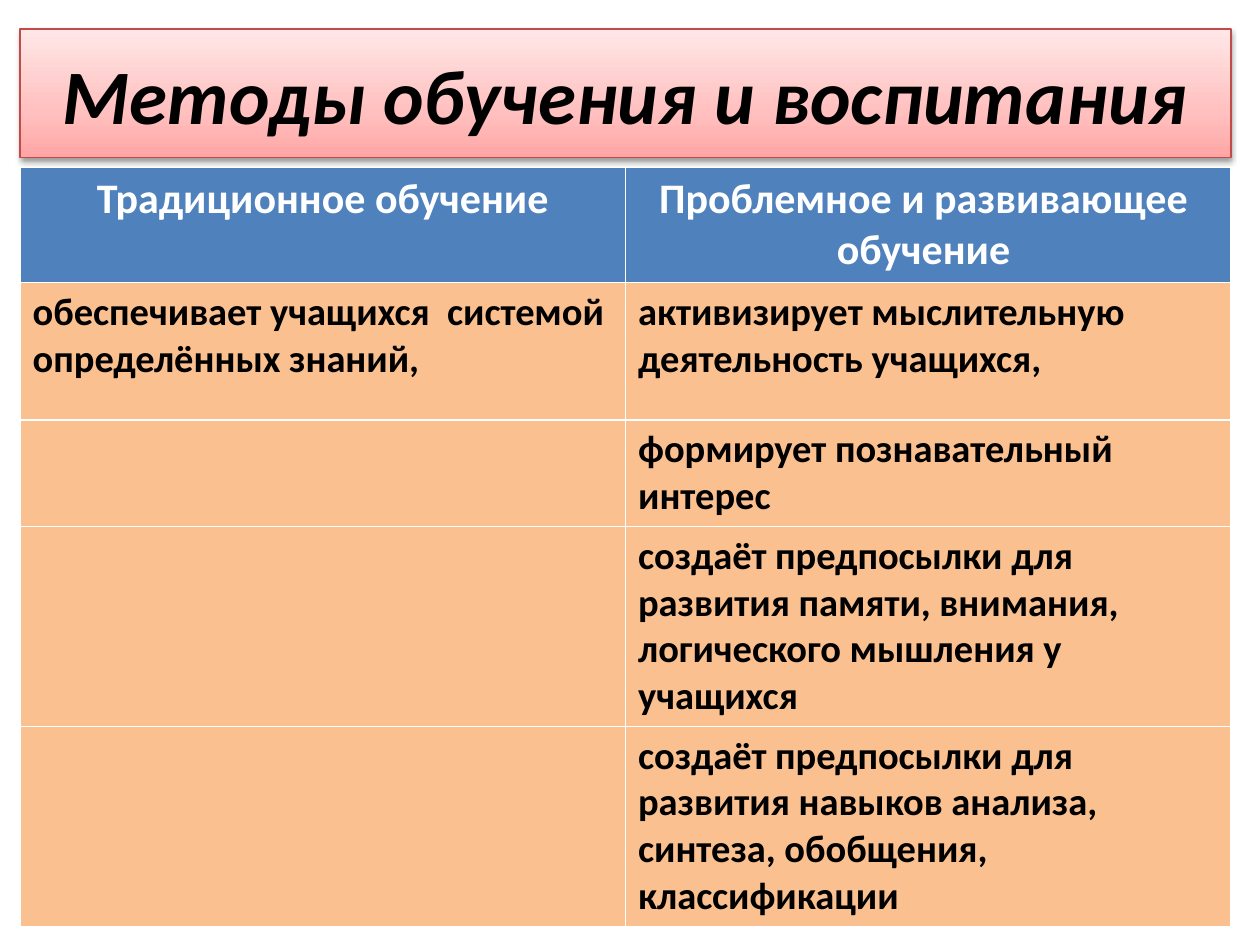
from lxml.etree import SubElement
from pptx import Presentation
from pptx.dml.color import RGBColor
from pptx.enum.text import MSO_ANCHOR, PP_ALIGN
from pptx.oxml.ns import qn
from pptx.util import Inches, Pt

HUES = {
    "black": "000000", "white": "FFFFFF", "blue": "4F81BD", "peach": "FAC090",
    "edge": "BF4C48", "deep": "FFA6A5", "mid": "FFC0BF", "pale": "FFE7E7",
}
LEFT, WIDTH = 0.16, 9.61
ROWS = [
    (0.9, "Традиционное обучение", "Проблемное и развивающее  обучение "),
    (1.09, "обеспечивает учащихся  системой определённых знаний,",
     "активизирует мыслительную деятельность учащихся,"),
    (0.83, "", "формирует познавательный интерес"),
    (1.56, "", "создаёт предпосылки для развития памяти, внимания, "
     "логического мышления у учащихся"),
    (1.56, "", "создаёт предпосылки для развития навыков анализа, "
     "синтеза, обобщения, классификации"),
]


def color(name):
    return RGBColor.from_string(HUES[name])


def write(frame, text, size, hue="black", align=PP_ALIGN.LEFT, italic=False):
    para = frame.paragraphs[0]
    para.alignment = align
    run = para.add_run()
    run.text = text
    font = run.font
    font.name, font.size = "Calibri", Pt(size)
    font.bold, font.italic = True, italic
    font.color.rgb = color(hue)


def shade(shape, stops, angle):
    shape.fill.gradient()
    shape.fill.gradient_angle = angle
    items = shape.element.spPr.find(".//" + qn("a:gsLst"))
    items.clear()
    for place, hue in stops:
        stop = SubElement(items, qn("a:gs"), pos=str(place * 1000))
        SubElement(stop, qn("a:srgbClr"), val=HUES[hue])


def shadow(shape, blur, dist, angle, alpha):
    effects = SubElement(shape.element.spPr, qn("a:effectLst"))
    outer = SubElement(effects, qn("a:outerShdw"), blurRad=str(Pt(blur)),
                       dist=str(Pt(dist)), dir=str(angle * 60000), rotWithShape="0")
    tint = SubElement(outer, qn("a:srgbClr"), val=HUES["black"])
    SubElement(tint, qn("a:alpha"), val=str(alpha * 1000))


def add_title(slide, text):
    title = slide.shapes.title
    title.left, title.top = Inches(LEFT), Inches(0.23)
    title.width, title.height = Inches(WIDTH), Inches(1.02)
    shade(title, [(0, "deep"), (35, "mid"), (100, "pale")], 90)
    title.line.color.rgb = color("edge")
    title.line.width = Pt(0.75)
    shadow(title, 3.1, 1.6, 90, 38)
    title.text_frame.vertical_anchor = MSO_ANCHOR.MIDDLE
    write(title.text_frame, text, 44, align=PP_ALIGN.CENTER, italic=True)


def add_grid(slide, rows):
    high = sum(row[0] for row in rows)
    table = slide.shapes.add_table(len(rows), 2, Inches(LEFT), Inches(1.33),
                                   Inches(WIDTH), Inches(high)).table
    table.horz_banding = False
    head = {"size": 24, "hue": "white", "align": PP_ALIGN.CENTER}
    for i, (tall, *texts) in enumerate(rows):
        table.rows[i].height = Inches(tall)
        for j, text in enumerate(texts):
            cell = table.cell(i, j)
            cell.fill.solid()
            cell.fill.fore_color.rgb = color("peach" if i else "blue")
            if text:
                write(cell.text_frame, text, **({"size": 22} if i else head))


def main():
    deck = Presentation()
    deck.slide_width, deck.slide_height = Inches(10), Inches(7.5)
    slide = deck.slides.add_slide(deck.slide_layouts[5])
    add_title(slide, "Методы обучения и воспитания")
    add_grid(slide, ROWS)
    deck.save("out.pptx")


if __name__ == "__main__":
    main()
